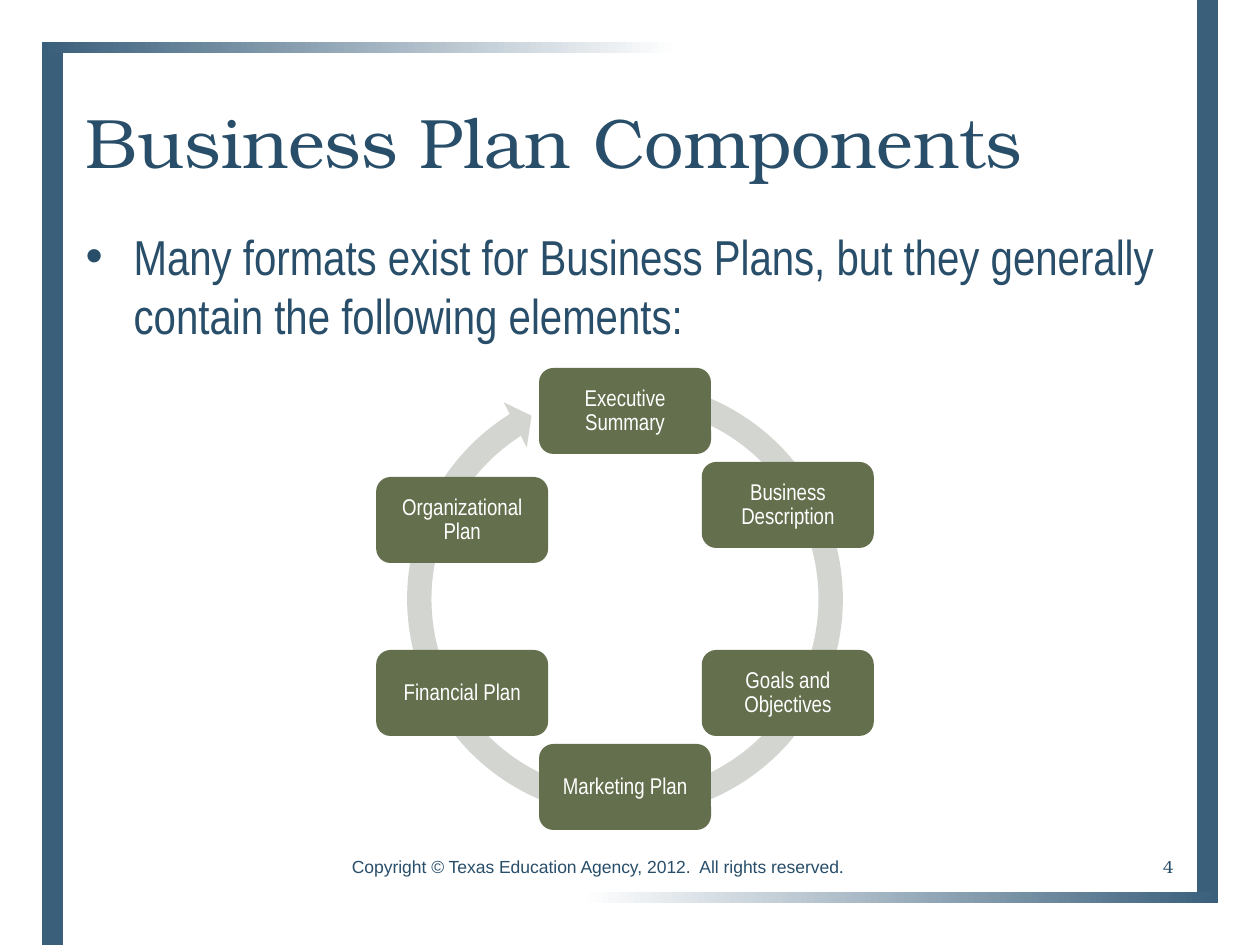
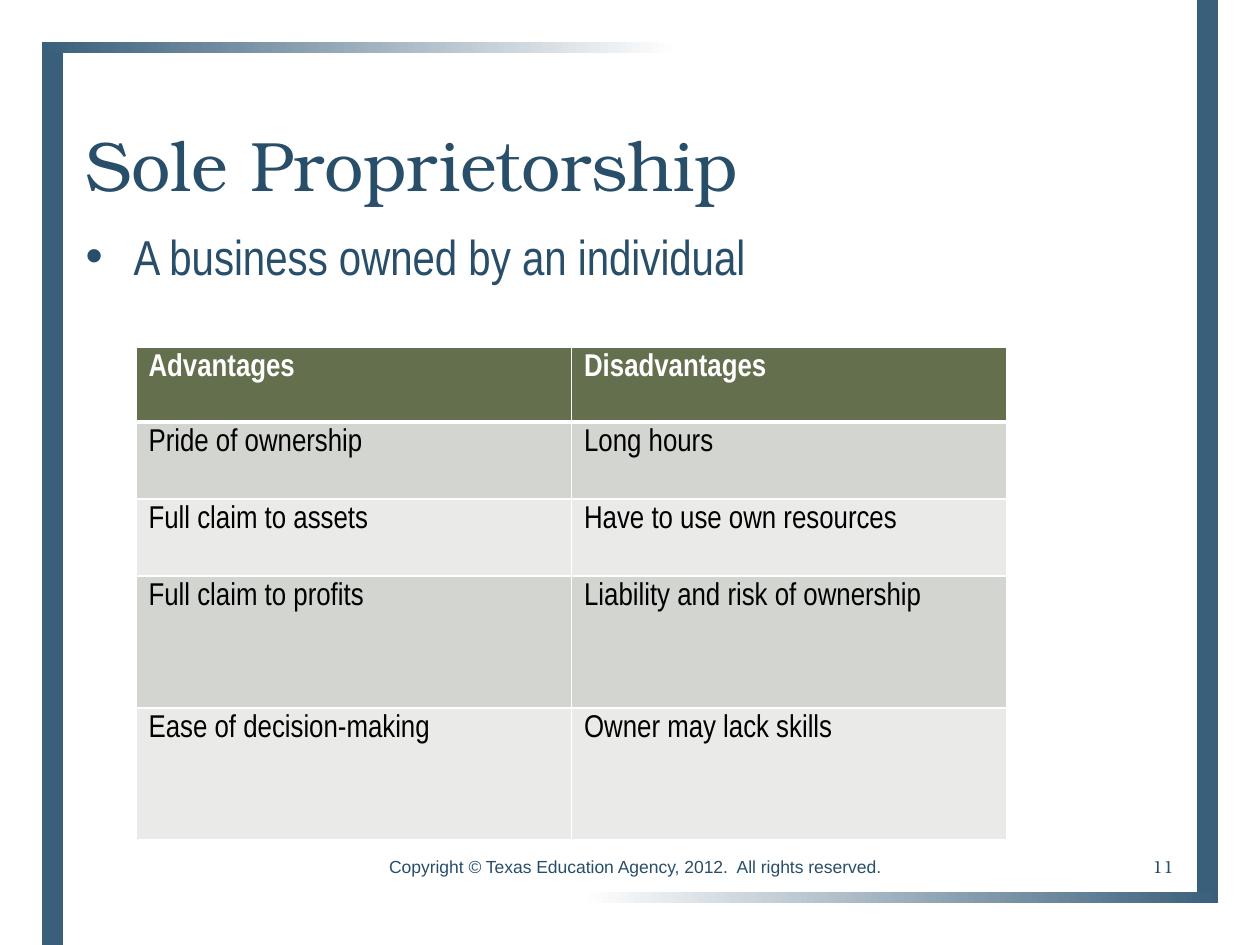
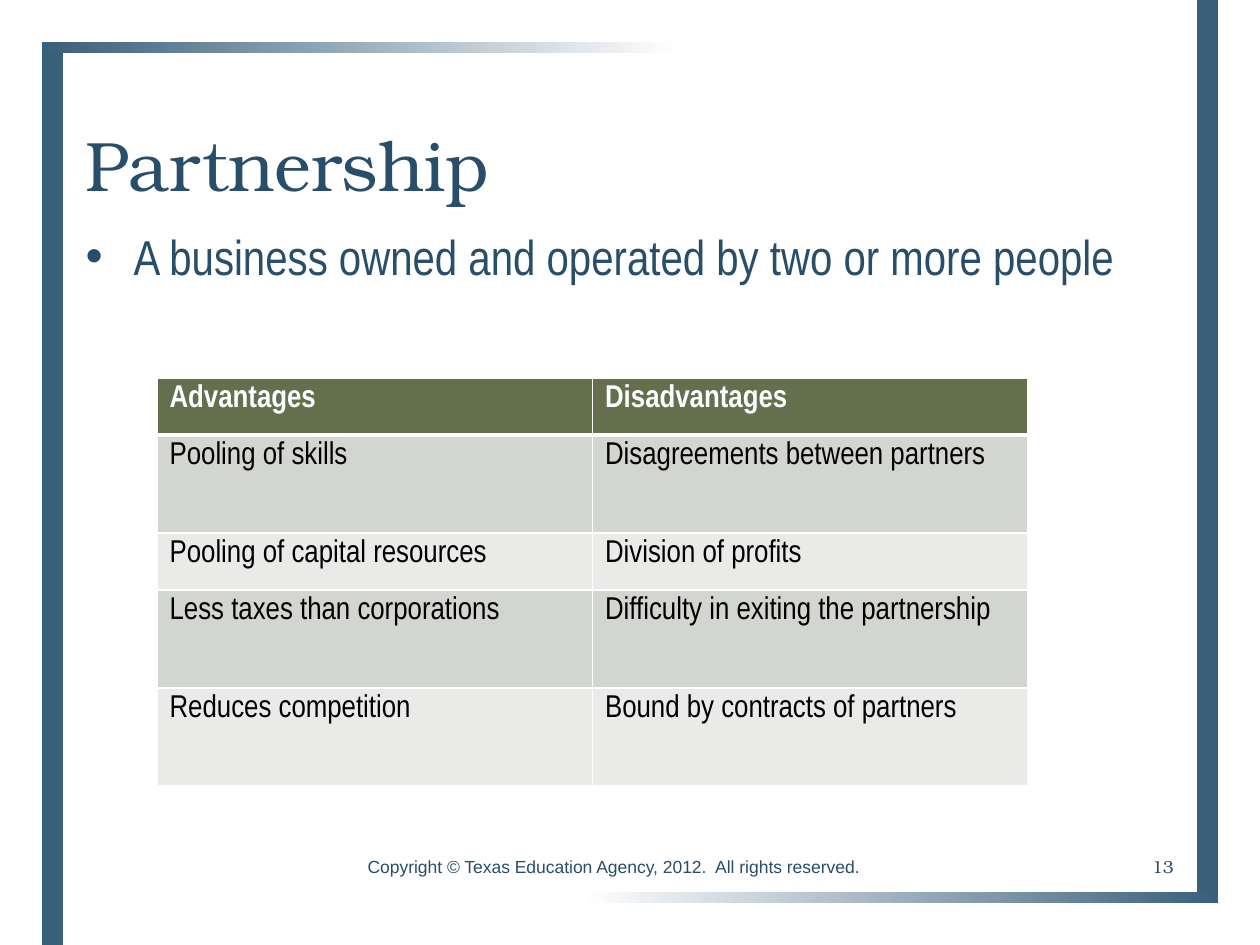
from math import cos, radians, sin

from lxml import etree
from pptx import Presentation
from pptx.dml.color import RGBColor
from pptx.enum.shapes import MSO_SHAPE as Shape
from pptx.enum.text import MSO_ANCHOR as Anchor, MSO_AUTO_SIZE as AutoSize, PP_ALIGN as Align
from pptx.oxml.ns import qn
from pptx.util import Emu, Pt

NAVY, BAND, WHITE, BLACK = "284E6A", "3A5F7B", "FFFFFF", "000000"
OLIVE, DARK_ROW, LIGHT_ROW = "646F4D", "D3D5D0", "EAEBE9"
SERIF, NARROW, SANS = "TeX Gyre Bonum", "Arial Narrow", "Arial"
BODY_BOX = (73, 220, 1113, 607)
NUMBER_BOX = (892, 842, 294, 50)
LOW_TITLE_BOX = (73, 63, 1113, 149)


def px(length):
    return Emu(round(length * 914400 / 126))


def color(value):
    return RGBColor.from_string(value)


def place(shape, box):
    shape.left, shape.top, shape.width, shape.height = map(px, box)


def add_run(paragraph, text, size, font, ink, bold=False):
    run = paragraph.add_run()
    run.text = text
    run.font.size = Pt(size)
    run.font.name = font
    run.font.bold = bold
    run.font.color.rgb = color(ink)


def add_preset(slide, kind, box, fill):
    shape = slide.shapes.add_shape(kind, *map(px, box))
    shape.shadow.inherit = False
    shape.line.fill.background()
    if fill:
        shape.fill.solid()
        shape.fill.fore_color.rgb = color(fill)
    return shape


def add_bands(slide):
    bands = [add_preset(slide, Shape.RECTANGLE, box, BAND)
             for box in ((1197, 0, 21, 892), (42, 53, 21, 892))]
    for box, angle in (((63, 892, 1155, 11), 180), ((42, 42, 1155, 11), 0)):
        band = add_preset(slide, Shape.RECTANGLE, box, None)
        band.fill.gradient()
        band.fill.gradient_angle = angle
        for stop, ink, position in zip(band.fill.gradient_stops, (BAND, WHITE), (0, 0.55)):
            stop.color.rgb = color(ink)
            stop.position = position
        bands.append(band)
    layout_tree = slide.slide_layout.shapes.element
    for index, band in enumerate(bands, start=2):
        layout_tree.insert(index, band.element)


def fill_title(slide, box, text):
    title = slide.shapes.title
    place(title, box)
    frame = title.text_frame
    frame.auto_size = AutoSize.NONE
    frame.vertical_anchor = Anchor.BOTTOM
    paragraph = frame.paragraphs[0]
    paragraph.alignment = Align.LEFT
    add_run(paragraph, text, 40, SERIF, NAVY)


def fill_body(slide, box, text):
    body = slide.placeholders[1]
    place(body, box)
    frame = body.text_frame
    frame.auto_size = AutoSize.NONE
    paragraph = frame.paragraphs[0]
    properties = paragraph._p.get_or_add_pPr()
    properties.set("marL", str(px(48)))
    properties.set("indent", str(-px(48)))
    etree.SubElement(properties, qn("a:buChar"), char="•")
    paragraph.space_before = Pt(0)
    add_run(paragraph, text, 28, NARROW, NAVY)


def add_label(slide, box, alignment, runs):
    frame = slide.shapes.add_textbox(*map(px, box)).text_frame
    frame.word_wrap = True
    frame.vertical_anchor = Anchor.MIDDLE
    paragraph = frame.paragraphs[0]
    paragraph.alignment = alignment
    for text, font in runs:
        add_run(paragraph, text, 10, font, NAVY)


def add_footer(slide, box, number, period_font=SANS):
    add_label(slide, NUMBER_BOX, Align.RIGHT, [(number, SERIF)])
    add_label(slide, box, Align.CENTER, [
        ("Copyright © Texas Education Agency, 2012.  All rights reserved", SANS),
        (".", period_font)])


def add_card(slide, box, text):
    card = add_preset(slide, Shape.ROUNDED_RECTANGLE, box, OLIVE)
    frame = card.text_frame
    frame.word_wrap = True
    frame.vertical_anchor = Anchor.MIDDLE
    frame.margin_left = frame.margin_right = px(10)
    frame.margin_top = frame.margin_bottom = px(10)
    paragraph = frame.paragraphs[0]
    paragraph.alignment = Align.CENTER
    paragraph.line_spacing = 0.9
    add_run(paragraph, text, 13, NARROW, WHITE)


def add_cycle(slide, box, cards):
    ring = add_preset(slide, Shape.CIRCULAR_ARROW, box, DARK_ROW)
    for index, value in enumerate((5274, 312630, 14266275, 17104702, 5477)):
        ring.adjustments[index] = value / 100000
    left, top, width, height = box
    card_width, card_height, radius = 172, 86, 188
    for index, (text, drop) in enumerate(cards):
        angle = radians(index * 360 / len(cards) - 90)
        center_x = left + width / 2 + radius * cos(angle)
        center_y = top + height / 2 + radius * sin(angle) + drop
        add_card(slide, (center_x - card_width / 2, center_y - card_height / 2,
                         card_width, card_height), text)


def add_border(cell, side, points):
    line = etree.SubElement(cell._tc.get_or_add_tcPr(), qn(f"a:ln{side}"), w=str(Pt(points)))
    fill = etree.SubElement(line, qn("a:solidFill"))
    etree.SubElement(fill, qn("a:srgbClr"), val=WHITE)


def format_cell(cell, text, row_index):
    header = row_index == 0
    widths = {"L": 1, "R": 1, "T": 3 if row_index == 1 else 1, "B": 3 if header else 1}
    for side, points in widths.items():
        add_border(cell, side, points)
    cell.fill.solid()
    cell.fill.fore_color.rgb = color(
        OLIVE if header else DARK_ROW if row_index % 2 else LIGHT_ROW)
    add_run(cell.text_frame.paragraphs[0], text, 18, NARROW,
            WHITE if header else BLACK, header)


def add_comparison(slide, left, top, row_heights, pairs):
    rows = [("Advantages", "Disadvantages"), *pairs]
    box = (left, top, 871, sum(row_heights))
    table = slide.shapes.add_table(len(rows), 2, *map(px, box)).table
    for row_index, (texts, height) in enumerate(zip(rows, row_heights)):
        table.rows[row_index].height = px(height)
        for column_index, text in enumerate(texts):
            format_cell(table.cell(row_index, column_index), text, row_index)


def add_base(presentation, title_box, title, body):
    slide = presentation.slides.add_slide(presentation.slide_layouts[1])
    fill_title(slide, title_box, title)
    fill_body(slide, BODY_BOX, body)
    return slide


def build_components(presentation):
    slide = add_base(presentation, (73, 53, 1113, 136), "Business Plan Components",
                     "Many formats exist for Business Plans, but they generally "
                     "contain the following elements:")
    add_bands(slide)
    add_cycle(slide, (394, 368, 462, 462), [
        ("Executive Summary", 0), ("Business Description", 0),
        ("Goals and Objectives", 0), ("Marketing Plan", 0),
        ("Financial Plan", 0), ("Organizational Plan", 15)])
    add_footer(slide, (262, 842, 672, 50), "4", SERIF)


def build_sole_proprietorship(presentation):
    slide = add_base(presentation, LOW_TITLE_BOX, "Sole Proprietorship",
                     "A business owned by an individual")
    add_comparison(slide, 136, 347, (75, 77, 77, 132, 132), [
        ("Pride of ownership", "Long hours"),
        ("Full claim to assets", "Have to use own resources"),
        ("Full claim to profits", "Liability and risk of ownership"),
        ("Ease of decision-making", "Owner may lack skills")])
    add_footer(slide, (325, 842, 620, 50), "11")


def build_partnership(presentation):
    slide = add_base(presentation, LOW_TITLE_BOX, "Partnership",
                     "A business owned and operated by two or more people")
    add_comparison(slide, 157, 378, (57, 98, 57, 98, 98), [
        ("Pooling of skills", "Disagreements between partners"),
        ("Pooling of capital resources", "Division of profits"),
        ("Less taxes than corporations", "Difficulty in exiting the partnership"),
        ("Reduces competition", "Bound by contracts of partners")])
    add_footer(slide, (325, 842, 577, 50), "13")


def main():
    presentation = Presentation()
    presentation.slide_width, presentation.slide_height = px(1260), px(945)
    build_components(presentation)
    build_sole_proprietorship(presentation)
    build_partnership(presentation)
    presentation.save("out.pptx")


if __name__ == "__main__":
    main()
